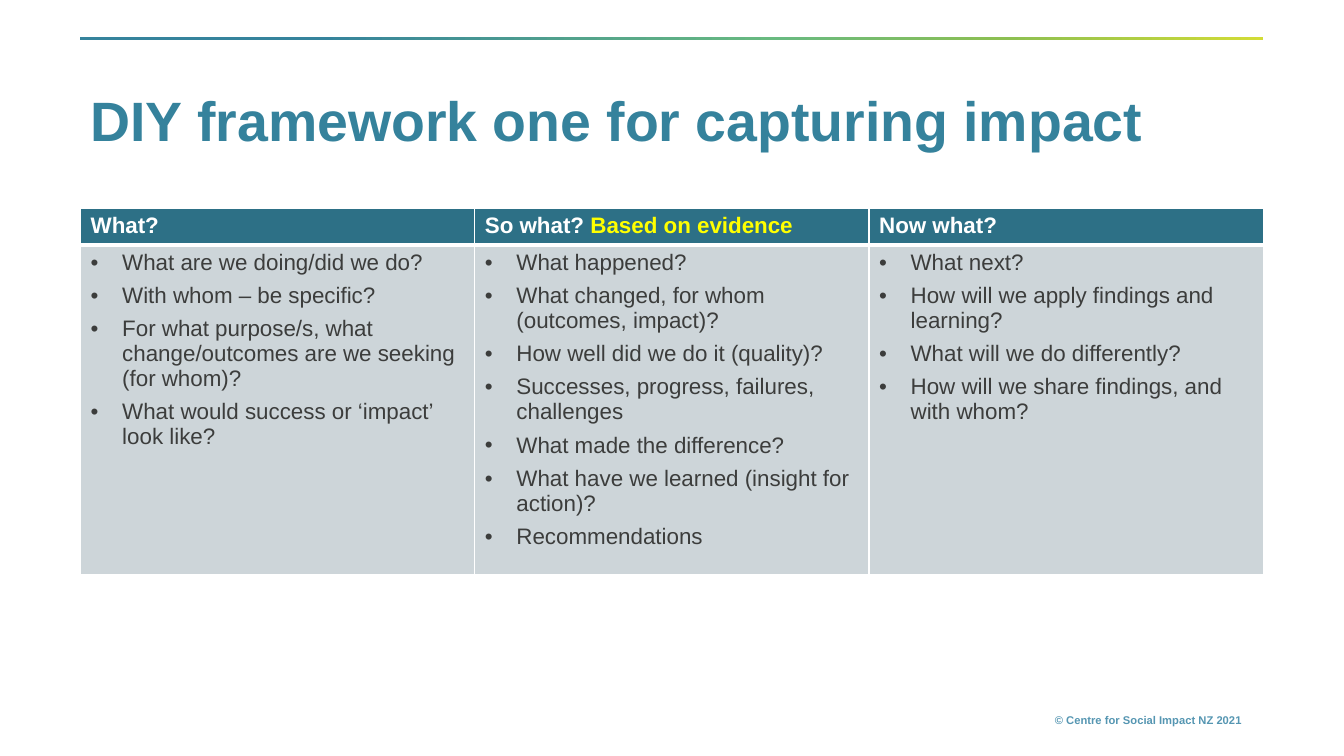
from dataclasses import dataclass

from lxml import etree
from pptx import Presentation
from pptx.dml.color import RGBColor
from pptx.enum.shapes import MSO_SHAPE
from pptx.enum.text import MSO_ANCHOR, MSO_AUTO_SIZE, PP_ALIGN
from pptx.oxml.ns import qn
from pptx.util import Pt

RECT = MSO_SHAPE.RECTANGLE
MIDDLE, TOP = MSO_ANCHOR.MIDDLE, MSO_ANCHOR.TOP
LEFT, RIGHT = PP_ALIGN.LEFT, PP_ALIGN.RIGHT
GROW, FIXED = MSO_AUTO_SIZE.SHAPE_TO_FIT_TEXT, MSO_AUTO_SIZE.NONE


@dataclass(frozen=True)
class Theme:
    font: str = "Arial"
    title: str = "35829C"
    footer: str = "5596B2"
    head: str = "2D7086"
    body: str = "CDD5D9"
    ink: str = "3C3D3C"
    white: str = "FFFFFF"
    accent: str = "FFFF00"
    rule: tuple = ((20, "35839C"), (59, "69BA80"), (78, "8CBF52"), (100, "D2DC36"))
    title_size: float = 39.6
    table_size: float = 16
    footer_size: float = 8


HEADS = [
    [("What?", "white")],
    [("So what? ", "white"), ("Based on evidence", "accent")],
    [("Now what?", "white")],
]
POINTS = [
    [
        "What are we doing/did we do?",
        "With whom – be specific?",
        "For what purpose/s, what change/outcomes are we seeking (for whom)?",
        "What would success or ‘impact’ look like?",
    ],
    [
        "What happened?",
        "What changed, for whom (outcomes, impact)?",
        "How well did we do it (quality)?",
        "Successes, progress, failures, challenges",
        "What made the difference?",
        "What have we learned (insight for action)?",
        "Recommendations",
    ],
    [
        "What next?",
        "How will we apply findings and learning?",
        "What will we do differently?",
        "How will we share findings, and with whom?",
    ],
]


class Deck:
    def __init__(self, theme, slide):
        self.theme = theme
        self.slide = slide

    def style(self, font, size, color, bold):
        font.name = self.theme.font
        font.size = Pt(size)
        font.bold = bold
        font.color.rgb = RGBColor.from_string(color)

    def text(self, words, box, size, color, align=LEFT, anchor=TOP, fit=FIXED, space=1.0):
        frame = self.slide.shapes.add_textbox(*map(Pt, box)).text_frame
        frame.word_wrap = True
        frame.auto_size = fit
        frame.vertical_anchor = anchor
        frame.text = words
        para = frame.paragraphs[0]
        para.alignment = align
        para.line_spacing = space
        self.style(para.runs[0].font, size, color, True)

    def rule(self, box):
        bar = self.slide.shapes.add_shape(RECT, *map(Pt, box))
        bar.shadow.inherit = False
        bar.line.fill.background()
        bar.fill.gradient()
        bar.fill.gradient_angle = 0
        stops = bar.element.spPr.find(".//" + qn("a:gsLst"))
        for stop in list(stops):
            stops.remove(stop)
        for place, color in self.theme.rule:
            stop = etree.SubElement(stops, qn("a:gs"), pos=str(place * 1000))
            etree.SubElement(stop, qn("a:srgbClr"), val=color)

    def edge(self, cell, thick):
        """Draw white cell borders, 3 pt on the thick side and 1 pt elsewhere."""
        props = cell._tc.get_or_add_tcPr()
        for spot, side in enumerate(("lnL", "lnR", "lnT", "lnB")):
            width = Pt(3 if side == thick else 1)
            line = etree.Element(qn("a:" + side), w=str(int(width)))
            fill = etree.SubElement(line, qn("a:solidFill"))
            etree.SubElement(fill, qn("a:srgbClr"), val=self.theme.white)
            props.insert(spot, line)

    def paint(self, cell, color, thick):
        cell.fill.solid()
        cell.fill.fore_color.rgb = RGBColor.from_string(color)
        self.edge(cell, thick)

    def head(self, cell, parts):
        para = cell.text_frame.paragraphs[0]
        for words, tone in parts:
            run = para.add_run()
            run.text = words
            self.style(run.font, self.theme.table_size, getattr(self.theme, tone), True)
        self.paint(cell, self.theme.head, "lnB")

    def bullets(self, cell, items):
        cell.text_frame.text = "\n".join(items)
        for para in cell.text_frame.paragraphs:
            props = para._p.get_or_add_pPr()
            props.set("marL", str(int(Pt(22.5))))
            props.set("indent", str(int(Pt(-22.5))))
            etree.SubElement(props, qn("a:buFont"), typeface=self.theme.font)
            etree.SubElement(props, qn("a:buChar"), char="•")
            para.space_after = Pt(6)
            self.style(para.runs[0].font, self.theme.table_size, self.theme.ink, False)
        self.paint(cell, self.theme.body, "lnT")

    def table(self, box, rows, heads, points):
        grid = self.slide.shapes.add_table(2, len(heads), *map(Pt, box)).table
        grid.horz_banding = False
        for row, height in zip(grid.rows, rows):
            row.height = Pt(height)
        for col, (parts, items) in enumerate(zip(heads, points)):
            self.head(grid.cell(0, col), parts)
            self.bullets(grid.cell(1, col), items)


def main():
    show = Presentation()
    show.slide_width, show.slide_height = Pt(960), Pt(540)
    theme = Theme()
    deck = Deck(theme, show.slides.add_slide(show.slide_layouts[6]))
    deck.text("© Centre for Social Impact NZ 2021", (640, 506.2, 254.2, 17),
              theme.footer_size, theme.footer, align=RIGHT, fit=GROW)
    deck.rule((57, 26.5, 845.3, 2))
    deck.text("DIY framework one for capturing impact", (57.6, 55.5, 844.8, 66),
              theme.title_size, theme.title, anchor=MIDDLE, space=0.9)
    deck.table((57.6, 148.5, 844.8, 224), (22.3, 201.6), HEADS, POINTS)
    show.save("out.pptx")


if __name__ == "__main__":
    main()
